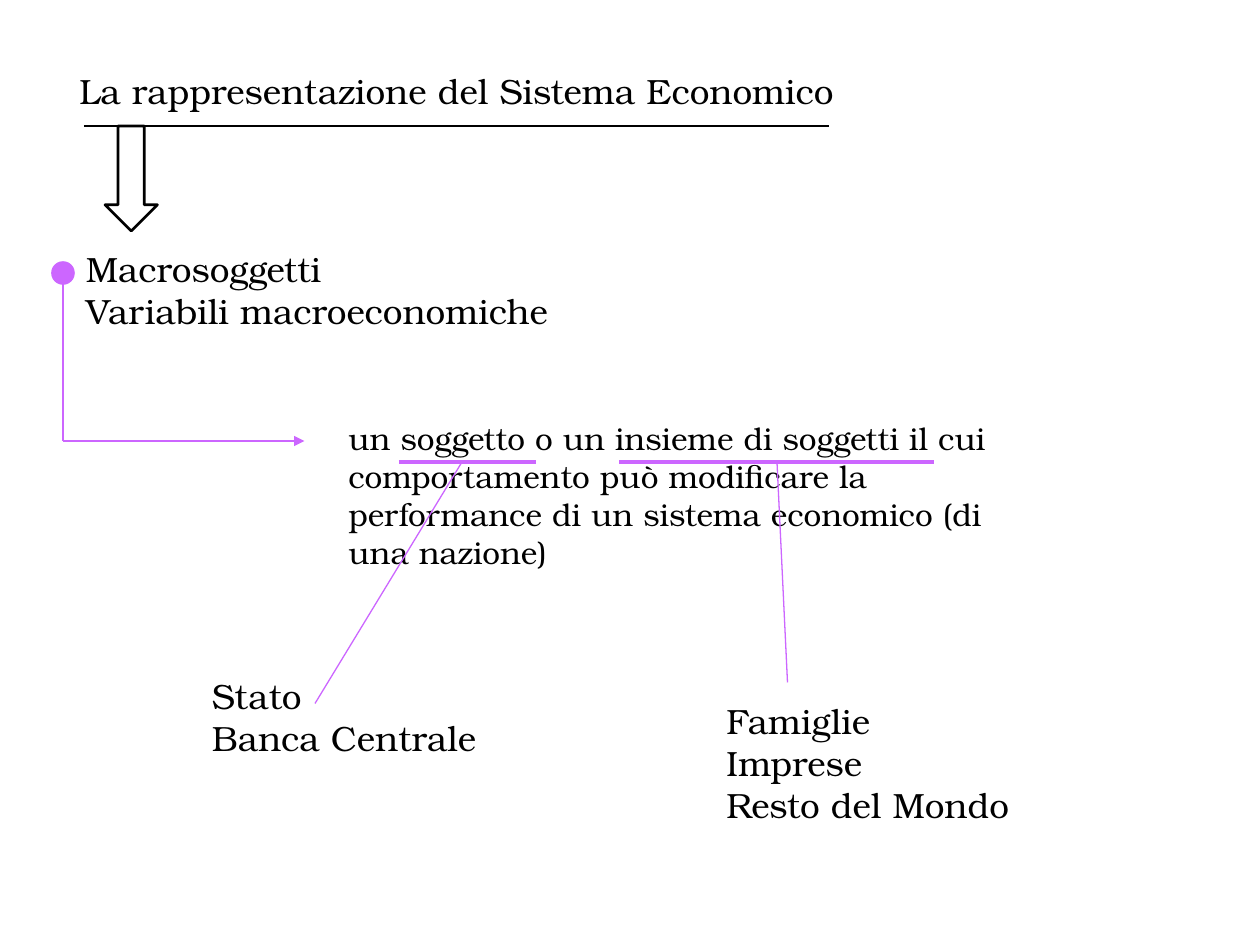
from lxml import etree
from pptx import Presentation
from pptx.dml.color import RGBColor
from pptx.enum.shapes import MSO_CONNECTOR, MSO_SHAPE
from pptx.enum.text import PP_ALIGN
from pptx.oxml.ns import qn
from pptx.util import Pt

BLACK = RGBColor(0x00, 0x00, 0x00)
WHITE = RGBColor(0xFF, 0xFF, 0xFF)
VIOLET = RGBColor(0xCC, 0x66, 0xFF)
FONT = "TeX Gyre Bonum"
LEFT, CENTER = PP_ALIGN.LEFT, PP_ALIGN.CENTER
STRAIGHT = MSO_CONNECTOR.STRAIGHT
DOWN_ARROW, OVAL = MSO_SHAPE.DOWN_ARROW, MSO_SHAPE.OVAL

TEXTS = [
    (["La rappresentazione del Sistema Economico"], (24, 36, 474, 31), 20, CENTER, True),
    (["Macrosoggetti", "Variabili macroeconomiche"], (42, 138, 279, 79), 20, LEFT, False),
    (["un soggetto o un insieme di soggetti il cui comportamento può modificare "
      "la performance di un sistema economico (di una nazione)"],
     (192, 236, 380, 94), 18, LEFT, True),
    (["Stato", "Banca Centrale"], (114, 382, 166, 55), 20, LEFT, False),
    (["Famiglie", "Imprese", "Resto del Mondo"], (408, 396, 176, 103), 20, LEFT, False),
]
SHAPES = [
    (DOWN_ARROW, (60, 72, 30, 60), WHITE, BLACK),
    (OVAL, (30, 150, 12, 12), VIOLET, VIOLET),
]
LINES = [
    ((48, 72), (474, 72), BLACK, 1.5, False),
    ((36, 162), (36, 252), VIOLET, 1.5, False),
    ((36, 252), (174, 252), VIOLET, 1.5, True),
    ((228, 264), (306, 264), VIOLET, 2.25, False),
    ((264, 264), (180, 402), VIOLET, 0.75, False),
    ((354, 264), (534, 264), VIOLET, 2.25, False),
    ((444, 264), (450, 390), VIOLET, 0.75, False),
]


def add_text(s, paragraphs, box, size, align, wrap):
    tf = s.shapes.add_textbox(*map(Pt, box)).text_frame
    tf.word_wrap = wrap
    for i, text in enumerate(paragraphs):
        p = tf.paragraphs[0] if i == 0 else tf.add_paragraph()
        p.text = text
        p.alignment = align
        p.font.name = FONT
        p.font.size = Pt(size)
        p.font.color.rgb = BLACK


def add_shape(s, kind, box, fill, line):
    sp = s.shapes.add_shape(kind, *map(Pt, box))
    sp.shadow.inherit = False
    sp.fill.solid()
    sp.fill.fore_color.rgb = fill
    sp.line.color.rgb = line
    sp.line.width = Pt(1.5)


def add_line(s, start, end, color, width, arrow):
    sp = s.shapes.add_connector(STRAIGHT, *map(Pt, start + end))
    sp.line.color.rgb = color
    sp.line.width = Pt(width)
    props = sp._element.spPr
    if arrow:
        etree.SubElement(props.find(qn("a:ln")), qn("a:tailEnd"), type="triangle")
    etree.SubElement(props, qn("a:effectLst"))


def main():
    prs = Presentation()
    prs.slide_width, prs.slide_height = Pt(720), Pt(540)
    s = prs.slides.add_slide(prs.slide_layouts[6])
    for text in TEXTS:
        add_text(s, *text)
    for shape in SHAPES:
        add_shape(s, *shape)
    for line in LINES:
        add_line(s, *line)
    prs.save("out.pptx")


if __name__ == "__main__":
    main()
